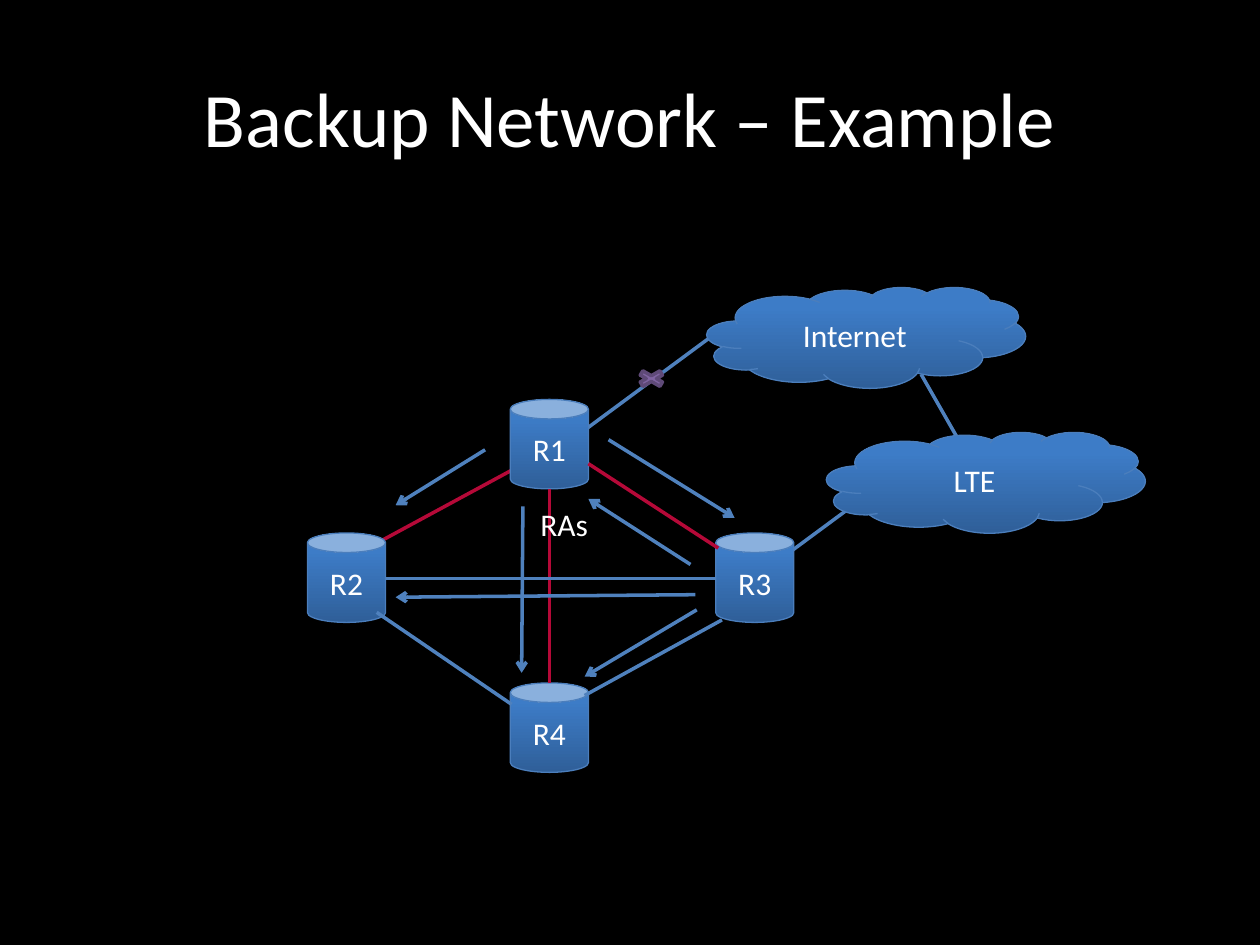
from dataclasses import dataclass

from lxml.etree import SubElement
from pptx import Presentation
from pptx.dml.color import RGBColor
from pptx.enum.shapes import MSO_CONNECTOR, MSO_SHAPE
from pptx.enum.text import MSO_ANCHOR, PP_ALIGN
from pptx.oxml.ns import qn
from pptx.util import Inches, Pt

COLUMNS, ROWS = 100, 75  # grid laid over the slide
WIDTH, HEIGHT = Inches(10), Inches(7.5)


@dataclass(frozen=True)
class Theme:
    font: str = "Calibri"
    title_size: float = 44
    label_size: float = 18
    background: str = "000000"
    text: str = "FFFFFF"
    link: str = "4F81BD"
    backup: str = "B50938"
    node_dark: str = "2F5F99"
    node_light: str = "3D7CC7"
    node_edge: str = "4B7EBC"
    failure: str = "8064A2"
    failure_edge: str = "5F4A78"
    edge_width: float = 0.75
    link_width: float = 2


THEME = Theme()


@dataclass(frozen=True)
class Node:
    label: str
    column: float
    row: float


@dataclass(frozen=True)
class Link:
    start: tuple[float, float]
    end: tuple[float, float]
    color: str = THEME.link
    arrow: bool = False


ROUTER_SIZE = (6.2, 7.1)
CLOUD_SIZE = (25.3, 8)

ROUTERS = [
    Node("R1", 40.5, 31.7),
    Node("R2", 24.4, 42.3),
    Node("R3", 56.8, 42.3),
    Node("R4", 40.5, 54.2),
]
CLOUDS = [Node("Internet", 56.1, 22.8), Node("LTE", 65.6, 34.3)]

UPLINKS = [
    Link((73.1, 29.7), (75.9, 34.6)),
    Link((61.5, 44.7), (72.2, 36.8)),
    Link((30.3, 42.9), (41.2, 37), THEME.backup),
    Link((45.5, 34.8), (56.2, 26.9)),
]
MESH = [
    Link((46.7, 36.8), (57, 43.5), THEME.backup),
    Link((29.9, 48.6), (40.6, 55.9)),
    Link((46.4, 55.2), (57.3, 49.2)),
    Link((43.6, 38.8), (43.6, 54.2), THEME.backup),
    Link((30.6, 45.9), (56.8, 45.9)),
]
ADVERTISEMENTS = [
    Link((38.5, 35.7), (31.4, 40.1), arrow=True),
    Link((41.5, 40.2), (41.4, 53.4), arrow=True),
    Link((48.3, 34.9), (58.3, 41.1), arrow=True),
    Link((55.3, 48.4), (46.4, 53.7), arrow=True),
    Link((55.2, 47.2), (31.4, 47.4), arrow=True),
    Link((54.8, 44.8), (46.7, 39.6), arrow=True),
]


def x(column: float) -> int:
    return round(WIDTH * column / COLUMNS)


def y(row: float) -> int:
    return round(HEIGHT * row / ROWS)


def rgb(color: str) -> RGBColor:
    return RGBColor.from_string(color)


def write(shape, text: str, *, size: float = THEME.label_size, color: str = THEME.text,
          align=PP_ALIGN.CENTER, anchor=MSO_ANCHOR.MIDDLE) -> None:
    frame = shape.text_frame
    frame.word_wrap = True
    frame.vertical_anchor = anchor
    paragraph = frame.paragraphs[0]
    paragraph.alignment = align
    run = paragraph.add_run()
    run.text = text
    run.font.name, run.font.size = THEME.font, Pt(size)
    run.font.color.rgb = rgb(color)


def add_preset(slide, preset, column: float, row: float, size: tuple[float, float],
               edge: str, edge_width: float):
    shape = slide.shapes.add_shape(preset, x(column), y(row), x(size[0]), y(size[1]))
    shape.shadow.inherit = False
    shape.line.color.rgb = rgb(edge)
    shape.line.width = Pt(edge_width)
    return shape


def add_node(slide, node: Node, preset, size: tuple[float, float]) -> None:
    shape = add_preset(slide, preset, node.column, node.row, size,
                       THEME.node_edge, THEME.edge_width)
    shape.fill.gradient()
    shape.fill.gradient_angle = 90
    stops = ((0, THEME.node_dark), (0.8, THEME.node_light))
    for stop, (position, color) in zip(shape.fill.gradient_stops, stops):
        stop.position = position
        stop.color.rgb = rgb(color)
    write(shape, node.label)


def add_links(slide, links: list[Link]) -> None:
    for link in links:
        (x1, y1), (x2, y2) = link.start, link.end
        connector = slide.shapes.add_connector(
            MSO_CONNECTOR.STRAIGHT, x(x1), y(y1), x(x2), y(y2))
        connector.line.color.rgb = rgb(link.color)
        connector.line.width = Pt(THEME.link_width)
        if link.arrow:
            SubElement(connector.line._get_or_add_ln(), qn("a:tailEnd"), type="arrow")
        SubElement(connector._element.spPr, qn("a:effectLst"))


def main() -> None:
    deck = Presentation()
    deck.slide_width, deck.slide_height = WIDTH, HEIGHT
    slide = deck.slides.add_slide(deck.slide_layouts[6])
    slide.background.fill.solid()
    slide.background.fill.fore_color.rgb = rgb(THEME.background)

    # Links that run behind the routers and clouds
    add_links(slide, UPLINKS)

    # Title
    title = slide.shapes.add_textbox(x(5), y(3), x(90), y(12.5))
    write(title, "Backup Network – Example", size=THEME.title_size)

    # Routers and their mesh
    for router in ROUTERS:
        add_node(slide, router, MSO_SHAPE.CAN, ROUTER_SIZE)
    add_links(slide, MESH)

    # Outside networks
    for cloud in CLOUDS:
        add_node(slide, cloud, MSO_SHAPE.CLOUD, CLOUD_SIZE)

    # Failed uplink
    failure = add_preset(slide, MSO_SHAPE.MATH_MULTIPLY, 50.2, 29.2, (3, 1.7),
                         THEME.failure_edge, THEME.link_width)
    failure.fill.solid()
    failure.fill.fore_color.rgb = rgb(THEME.failure)

    # Router advertisements
    add_links(slide, ADVERTISEMENTS)
    caption = slide.shapes.add_textbox(x(41.9), y(39.6), x(7), y(4))
    write(caption, "RAs", align=PP_ALIGN.LEFT, anchor=MSO_ANCHOR.TOP)

    deck.save("out.pptx")


if __name__ == "__main__":
    main()
